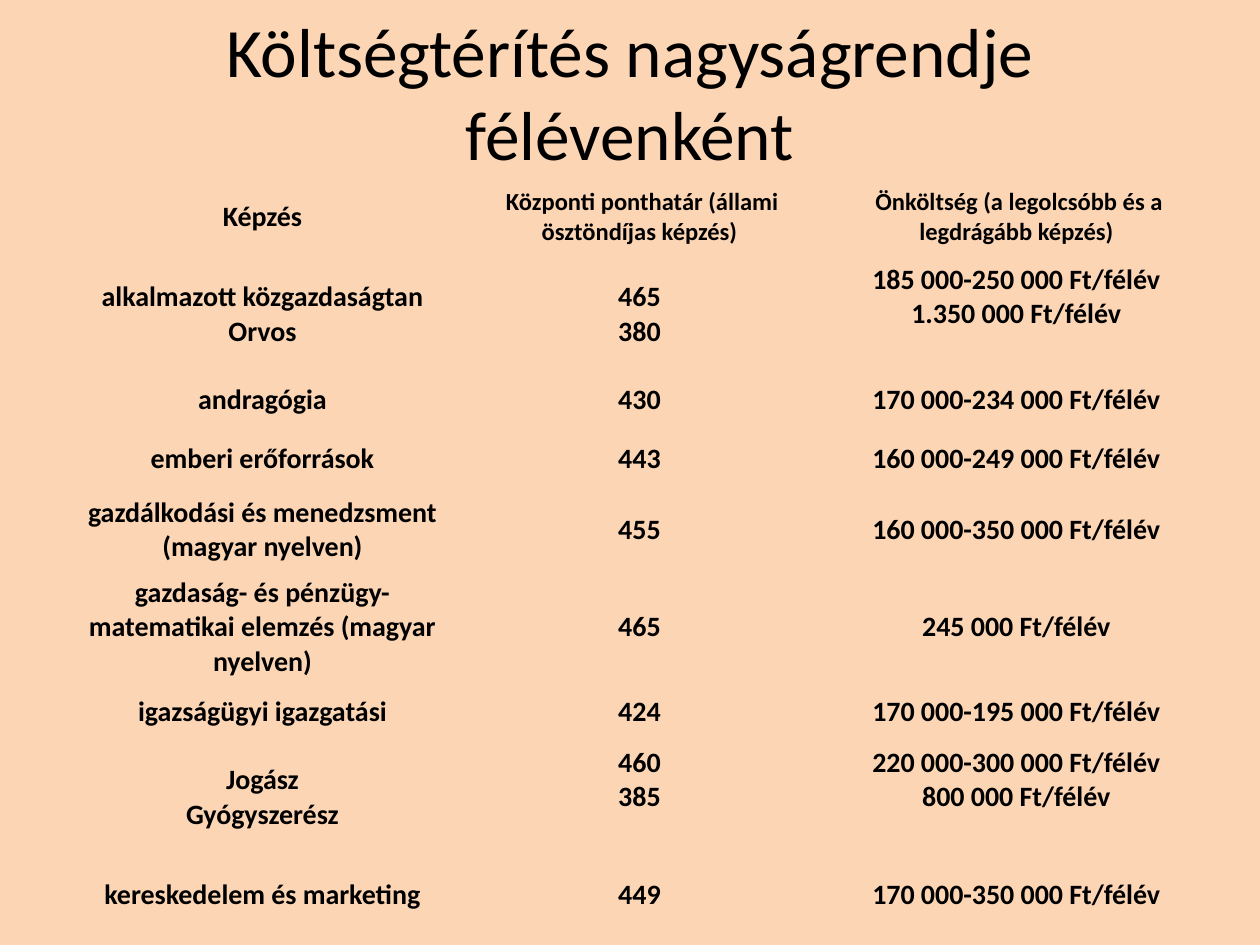
import pptx
import pptx.dml.color
import pptx.enum.text
import pptx.util

# Content: each cell is a list of paragraphs
TITLE = "Költségtérítés nagyságrendje félévenként"
HEADER = [
    ["Képzés"],
    [" Központi ponthatár (állami ösztöndíjas képzés)"],
    [" Önköltség (a legolcsóbb és a legdrágább képzés)"],
]
PROGRAMMES = [
    (["alkalmazott közgazdaságtan", "Orvos"], ["465", "380"],
     ["185 000-250 000 Ft/félév", "1.350 000 Ft/félév"]),
    (["andragógia"], ["430"], ["170 000-234 000 Ft/félév"]),
    (["emberi erőforrások"], ["443"], ["160 000-249 000 Ft/félév"]),
    (["gazdálkodási és menedzsment (magyar nyelven)"], ["455"],
     ["160 000-350 000 Ft/félév"]),
    (["gazdaság- és pénzügy-matematikai elemzés (magyar nyelven)"], ["465"],
     ["245 000 Ft/félév"]),
    (["igazságügyi igazgatási"], ["424"], ["170 000-195 000 Ft/félév"]),
    (["Jogász", "Gyógyszerész"], ["460", "385"],
     ["220 000-300 000 Ft/félév", "800 000 Ft/félév"]),
    (["kereskedelem és marketing"], ["449"], ["170 000-350 000 Ft/félév"]),
]

# Layout in px
PX = pptx.util.Inches(1) / 126
SLIDE_SIZE = (1260, 945)
TITLE_BOX = (63, 38, 1134, 107)
TABLE_LEFT, TABLE_TOP, COLUMN_WIDTH = 74, 175, 377
LOW, MIDDLE, HIGH = 59, 84, 111
ROW_HEIGHTS = [MIDDLE, HIGH, LOW, LOW, MIDDLE, HIGH, LOW, HIGH, MIDDLE]
TOP_CELLS = {(1, 2), (7, 1), (7, 2)}
MARGIN_SIDE, MARGIN_END = 9, 4

FONT = "Calibri"
BACKGROUND = pptx.dml.color.RGBColor(0xFC, 0xD5, 0xB5)
BLACK = pptx.dml.color.RGBColor(0, 0, 0)


def emu(pixels):
    return pptx.util.Emu(round(pixels * PX))


def write_text(text_frame, lines, size, bold=False):
    text_frame.word_wrap = True
    for index, line in enumerate(lines):
        paragraph = text_frame.add_paragraph() if index else text_frame.paragraphs[0]
        paragraph.alignment = pptx.enum.text.PP_ALIGN.CENTER
        run = paragraph.add_run()
        run.text = line
        run.font.name = FONT
        run.font.size = pptx.util.Pt(size)
        run.font.bold = bold
        run.font.color.rgb = BLACK


presentation = pptx.Presentation()
presentation.slide_width, presentation.slide_height = map(emu, SLIDE_SIZE)
slide = presentation.slides.add_slide(presentation.slide_layouts[6])
slide.background.fill.solid()
slide.background.fill.fore_color.rgb = BACKGROUND

# Title
title = slide.shapes.add_textbox(*map(emu, TITLE_BOX))
title.text_frame.vertical_anchor = pptx.enum.text.MSO_ANCHOR.MIDDLE
write_text(title.text_frame, [TITLE], size=39.6)

# Table of programmes, without fills or borders
rows = [HEADER, *PROGRAMMES]
table = slide.shapes.add_table(
    len(rows), len(HEADER), emu(TABLE_LEFT), emu(TABLE_TOP),
    emu(COLUMN_WIDTH * len(HEADER)), emu(sum(ROW_HEIGHTS))).table
table.first_row = table.horz_banding = False
style = table._tbl.tblPr.find(pptx.oxml.ns.qn("a:tableStyleId"))
style.text = "{2D5ABB26-0587-4C30-8999-92F81FD0307C}"  # no style, no grid
for column in table.columns:
    column.width = emu(COLUMN_WIDTH)

for row_index, (row, height) in enumerate(zip(rows, ROW_HEIGHTS)):
    table.rows[row_index].height = emu(height)
    for column_index, lines in enumerate(row):
        cell = table.cell(row_index, column_index)
        cell.fill.background()
        cell.margin_left = cell.margin_right = emu(MARGIN_SIDE)
        cell.margin_top = cell.margin_bottom = emu(MARGIN_END)
        at_top = (row_index, column_index) in TOP_CELLS
        cell.vertical_anchor = (pptx.enum.text.MSO_ANCHOR.TOP if at_top
                                else pptx.enum.text.MSO_ANCHOR.MIDDLE)
        small = row_index == 0 and column_index > 0
        write_text(cell.text_frame, lines, size=14 if small else 16, bold=True)

presentation.save("out.pptx")
